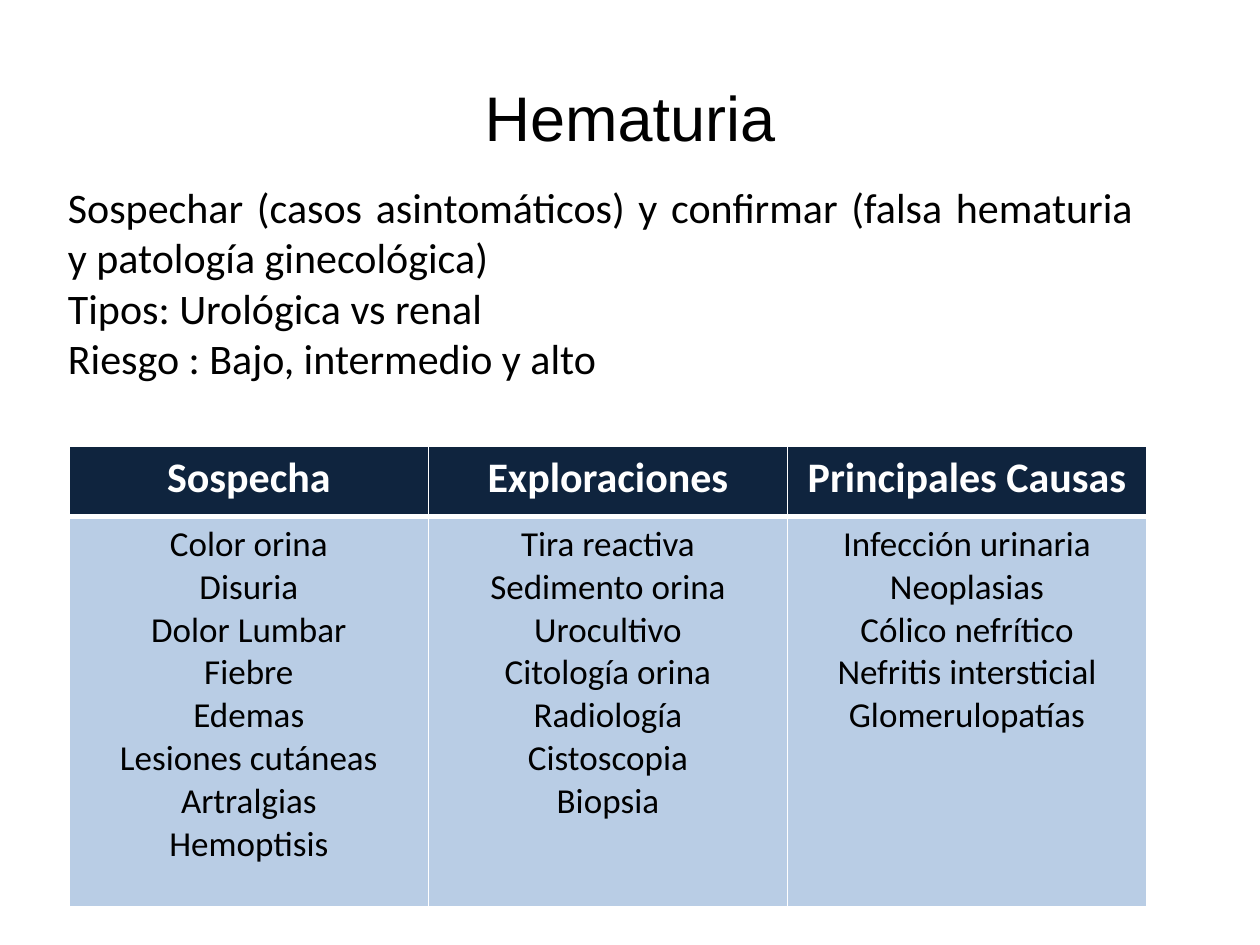
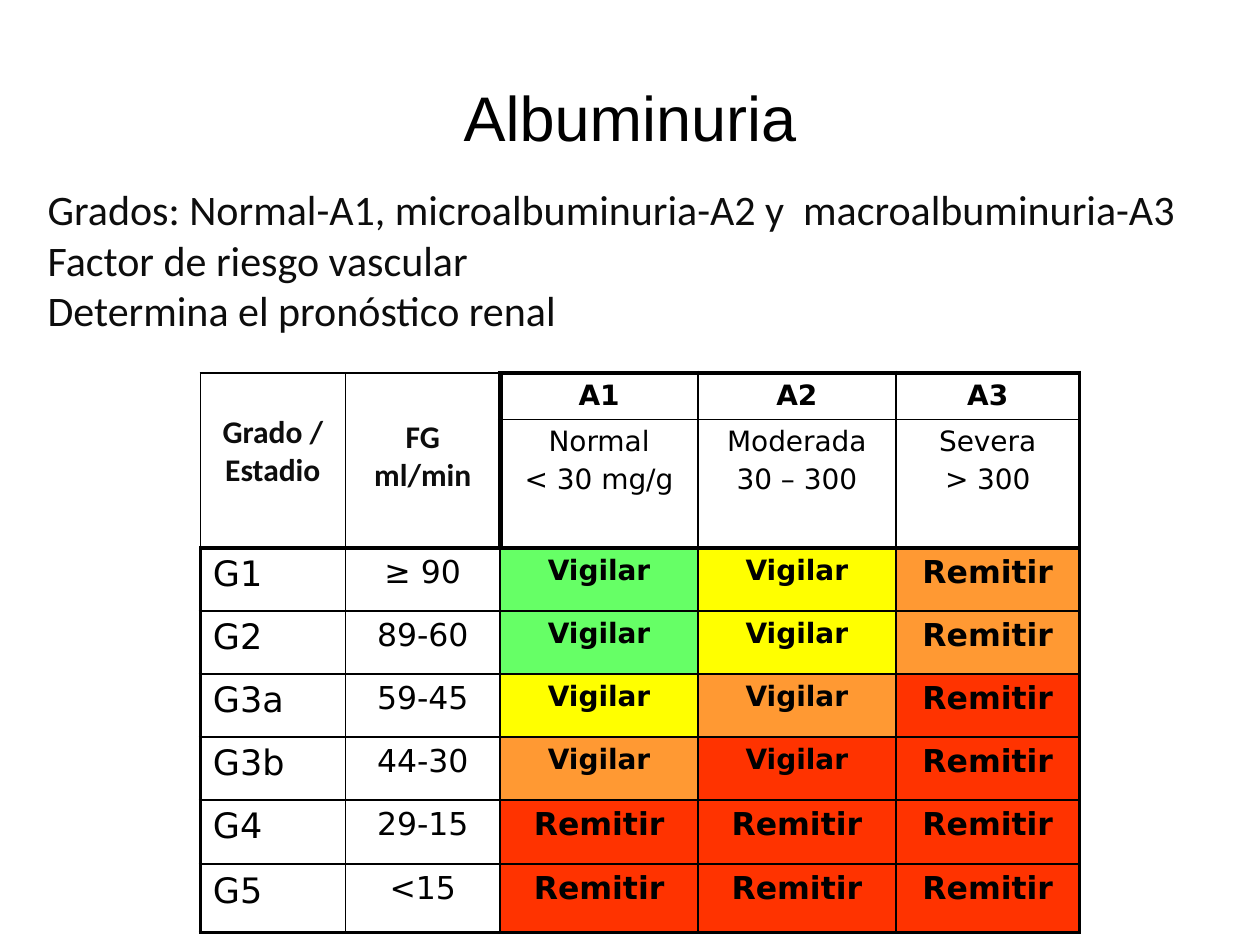
import pptx
import pptx.dml.color
import pptx.enum.text
import pptx.oxml.ns
import pptx.util
from lxml import etree

Inches = pptx.util.Inches
Pt = pptx.util.Pt
Align = pptx.enum.text.PP_ALIGN
RGB = pptx.dml.color.RGBColor.from_string


class Theme:
    black, ink, white = "000000", "0D0D0D", "FFFFFF"
    navy, pale = "0F243E", "B9CDE5"
    risk = {"g": "66FF66", "y": "FFFF00", "o": "FF9933", "r": "FF3300"}
    head, body, grid = "Arial", "Calibri", "DejaVu Sans"
    title, text, large, mid, small = 36, 24, 20, 18, 16
    thin, edge, thick = 0.96, 2.21, 3


def write(frame, lines, size, font, color, bold=False, align=Align.CENTER, before=0):
    frame.text = "\n".join(lines)
    frame.word_wrap = True
    for para in frame.paragraphs:
        para.alignment = align
        para.space_before = Pt(before)
        for run in para.runs:
            run.font.size = Pt(size)
            run.font.name = font
            run.font.bold = bold
            run.font.color.rgb = RGB(color)


def style(cell, fill, color, widths):
    """Fill a cell and draw its left, right, top and bottom borders."""
    if fill:
        cell.fill.solid()
        cell.fill.fore_color.rgb = RGB(fill)
    else:
        cell.fill.background()
    props = cell._tc.get_or_add_tcPr()
    qn = pptx.oxml.ns.qn
    for spot, (side, width) in enumerate(zip("LRTB", widths)):
        line = etree.Element(qn(f"a:ln{side}"), w=str(int(Pt(width))))
        paint = etree.SubElement(line, qn("a:solidFill"))
        etree.SubElement(paint, qn("a:srgbClr"), val=color)
        props.insert(spot, line)


deck = pptx.Presentation()
deck.slide_width, deck.slide_height = Inches(10), Inches(7.5)

# Title, body box, body colour, first alignment, body lines, table box, columns, rows
pages = [
    ("Hematuria", (0.44, 1.39, 8.65, 1.97), Theme.black, Align.JUSTIFY,
     ["Sospechar (casos asintomáticos) y confirmar (falsa hematuria y patología ginecológica)",
      "Tipos: Urológica vs renal",
      "Riesgo : Bajo, intermedio y alto"],
     (0.55, 3.54), [2.85] * 3, [0.56, 3.1]),
    ("Albuminuria", (0.28, 1.41, 9.61, 1.25), Theme.ink, Align.LEFT,
     ["Grados: Normal-A1, microalbuminuria-A2 y  macroalbuminuria-A3",
      "Factor de riesgo vascular",
      "Determina el pronóstico renal"],
     (1.59, 2.96), [1.15, 1.23, 1.57, 1.57, 1.46],
     [0.37, 1.02] + [0.5] * 4 + [0.51, 0.54]),
]

# Shared frame of both slides: title, body text and bare table
tables = []
for title, box, color, first, lines, spot, cols, rows in pages:
    slide = deck.slides.add_slide(deck.slide_layouts[6])
    head = slide.shapes.add_textbox(*map(Inches, (0.5, 0.3, 9, 1.25))).text_frame
    write(head, [title], Theme.title, Theme.head, Theme.black)
    head.vertical_anchor = pptx.enum.text.MSO_ANCHOR.MIDDLE

    body = slide.shapes.add_textbox(*map(Inches, box)).text_frame
    write(body, lines, Theme.text, Theme.body, color, align=Align.JUSTIFY)
    body.paragraphs[0].alignment = first

    size = spot + (sum(cols), sum(rows))
    table = slide.shapes.add_table(len(rows), len(cols), *map(Inches, size)).table
    table.first_row = table.horz_banding = False
    for col, width in zip(table.columns, cols):
        col.width = Inches(width)
    for row, height in zip(table.rows, rows):
        row.height = Inches(height)
    tables.append(table)

# Slide 1: signs, tests and causes
signs, grades = tables
groups = {
    "Sospecha": ["Color orina", "Disuria", "Dolor Lumbar", "Fiebre", "Edemas",
                 "Lesiones cutáneas", "Artralgias", "Hemoptisis"],
    "Exploraciones": ["Tira reactiva", "Sedimento orina", "Urocultivo", "Citología orina",
                      "Radiología", "Cistoscopia", "Biopsia"],
    "Principales Causas": ["Infección urinaria", "Neoplasias", "Cólico nefrítico",
                           "Nefritis intersticial", "Glomerulopatías"],
}
for c, (name, items) in enumerate(groups.items()):
    top, low = signs.cell(0, c), signs.cell(1, c)
    write(top.text_frame, [name], Theme.text, Theme.body, Theme.white, bold=True)
    write(low.text_frame, items, Theme.large, Theme.body, Theme.black)
    style(top, Theme.navy, Theme.white, (1, 1, 1, 3))
    style(low, Theme.pale, Theme.white, (1, 1, 3, 1))

# Slide 2: merged headings, lowered by a top margin
for c, (name, size, drop) in enumerate([("Grado / Estadio", Theme.mid, 0.32),
                                        ("FG ml/min", Theme.mid, 0.36)]):
    cell = grades.cell(0, c)
    cell.merge(grades.cell(1, c))
    write(cell.text_frame, [name], size, Theme.body, Theme.ink, bold=True)
    cell.margin_top = Inches(drop)

# Slide 2: albumin classes
classes = [("A1", ["Normal", "< 30 mg/g"]), ("A2", ["Moderada", "30 – 300"]),
           ("A3", ["Severa", "> 300"])]
for c, (name, range_) in enumerate(classes, 2):
    write(grades.cell(0, c).text_frame, [name], Theme.small, Theme.grid, Theme.black,
          bold=True, before=3.2)
    write(grades.cell(1, c).text_frame, range_, Theme.small, Theme.grid, Theme.black,
          before=3.2)

# Slide 2: stages, each with the risk colours of A1 to A3
stages = [("G1", "≥ 90", "gyo"), ("G2", "89-60", "gyo"), ("G3a", "59-45", "yor"),
          ("G3b", "44-30", "orr"), ("G4", "29-15", "rrr"), ("G5", "<15", "rrr")]
fills = {}
for r, (stage, rate, risks) in enumerate(stages, 2):
    write(grades.cell(r, 0).text_frame, [stage], Theme.large, Theme.grid, Theme.black,
          align=Align.LEFT, before=5.2)
    write(grades.cell(r, 1).text_frame, [rate], Theme.mid, Theme.grid, Theme.black,
          before=4.4)
    for c, risk in enumerate(risks, 2):
        refer = c == 4 or r >= 6
        write(grades.cell(r, c).text_frame, ["Remitir" if refer else "Vigilar"],
              Theme.mid if refer else Theme.small, Theme.grid, Theme.black,
              bold=True, before=4 if refer else 3.6)
        fills[r, c] = Theme.risk[risk]

# Slide 2: thick lines round the headings, medium ones on the outside
across, down = {}, {}
for c in range(5):
    for i in range(9):
        across[i, c] = Theme.thin
    across[2, c], across[8, c] = Theme.thick, Theme.edge
    if c >= 2:
        across[0, c] = Theme.thick
for r in range(8):
    for j in range(6):
        down[r, j] = Theme.thin
    down[r, 5] = Theme.edge
    if r < 2:
        down[r, 2] = Theme.thick
    else:
        down[r, 0] = Theme.edge
for r in range(8):
    for c in range(5):
        cell = grades.cell(r, c)
        base = 2 if cell.is_merge_origin else r + 1
        style(cell, fills.get((r, c)), Theme.black,
              (down[r, c], down[r, c + 1], across[r, c], across[base, c]))

deck.save("out.pptx")
